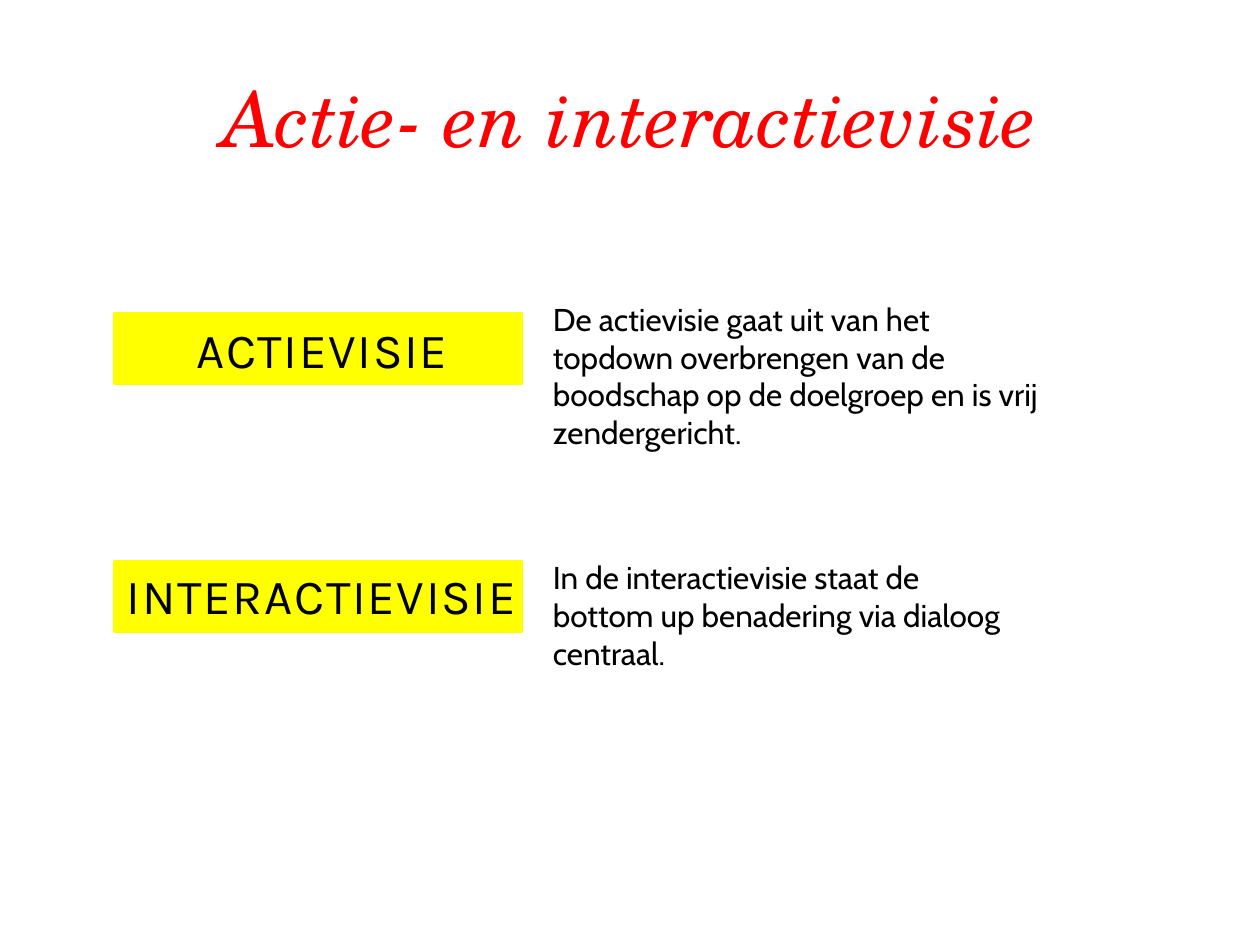
"""Build a slide that contrasts the action view with the interaction view."""
from pptx import Presentation
from pptx.dml.color import RGBColor
from pptx.enum.shapes import MSO_SHAPE
from pptx.enum.text import MSO_ANCHOR, PP_ALIGN
from pptx.util import Inches, Pt

RECTANGLE = MSO_SHAPE.RECTANGLE
CENTER, LEFT = PP_ALIGN.CENTER, PP_ALIGN.LEFT
MIDDLE, TOP = MSO_ANCHOR.MIDDLE, MSO_ANCHOR.TOP
WIDTH, HEIGHT = 10, 7.5
COLORS = {"title": "FF0000", "text": "000000", "label": "FFFF00"}
STYLES = {
    "title": {"font": "TeX Gyre Schola", "size": 44, "color": "title", "italic": True,
              "align": CENTER, "anchor": MIDDLE},
    "label": {"font": "Karla", "size": 28, "color": "text", "spacing": 100},
    "body": {"font": "Cabin", "size": 18, "color": "text"},
}
LABEL_LEFT, LABEL_WIDTH, LABEL_HEIGHT = 0.91, 3.23, 0.55
BODY_LEFT = 4.29
VIEWS = [
    {"name": "ACTIEVISIE", "bar_top": 2.49, "name_box": (1.46, 2.49, 2.6, 0.57),
     "wrap": True, "body_box": (BODY_LEFT, 2.33, 4.09, 1.31),
     "body": "De actievisie gaat uit van het topdown overbrengen van de "
             "boodschap op de doelgroep en is vrij zendergericht."},
    {"name": "INTERACTIEVISIE", "bar_top": 4.46, "name_box": (LABEL_LEFT, 4.44, 3.36, 0.57),
     "wrap": False, "body_box": (BODY_LEFT, 4.38, 3.94, 1.01),
     "body": "In de interactievisie staat de bottom up benadering via dialoog centraal."},
]


class SlideBuilder:
    """Hold the current slide and draw its styled elements."""

    def __init__(self, slide):
        """Keep the slide that receives the elements."""
        self.slide = slide

    def bar(self, left, top, width, height):
        """Draw a filled label bar."""
        bar = self.slide.shapes.add_shape(RECTANGLE, *map(Inches, (left, top, width, height)))
        color = RGBColor.from_string(COLORS["label"])
        bar.shadow.inherit = False
        bar.fill.solid()
        bar.fill.fore_color.rgb = color
        bar.line.color.rgb = color
        bar.line.width = Pt(2)

    def text(self, wording, box, style_name, wrap=True):
        """Write one paragraph in a named style."""
        style = STYLES[style_name]
        frame = self.slide.shapes.add_textbox(*map(Inches, box)).text_frame
        frame.text = wording
        frame.word_wrap = wrap
        frame.vertical_anchor = style.get("anchor", TOP)
        paragraph = frame.paragraphs[0]
        paragraph.alignment = style.get("align", LEFT)
        font = paragraph.runs[0].font
        font.name = style["font"]
        font.size = Pt(style["size"])
        font.italic = style.get("italic", False)
        font.color.rgb = RGBColor.from_string(COLORS[style["color"]])
        if "spacing" in style:
            paragraph.runs[0]._r.get_or_add_rPr().set("spc", str(style["spacing"]))


def main():
    """Build and save the slide."""
    deck = Presentation()
    deck.slide_width, deck.slide_height = Inches(WIDTH), Inches(HEIGHT)
    builder = SlideBuilder(deck.slides.add_slide(deck.slide_layouts[6]))
    builder.text("Actie- en interactievisie", (0.5, 0.3, WIDTH - 1, 1.25), "title")
    for view in VIEWS:
        builder.bar(LABEL_LEFT, view["bar_top"], LABEL_WIDTH, LABEL_HEIGHT)
        builder.text(view["name"], view["name_box"], "label", view["wrap"])
        builder.text(view["body"], view["body_box"], "body")
    deck.save("out.pptx")


if __name__ == "__main__":
    main()
